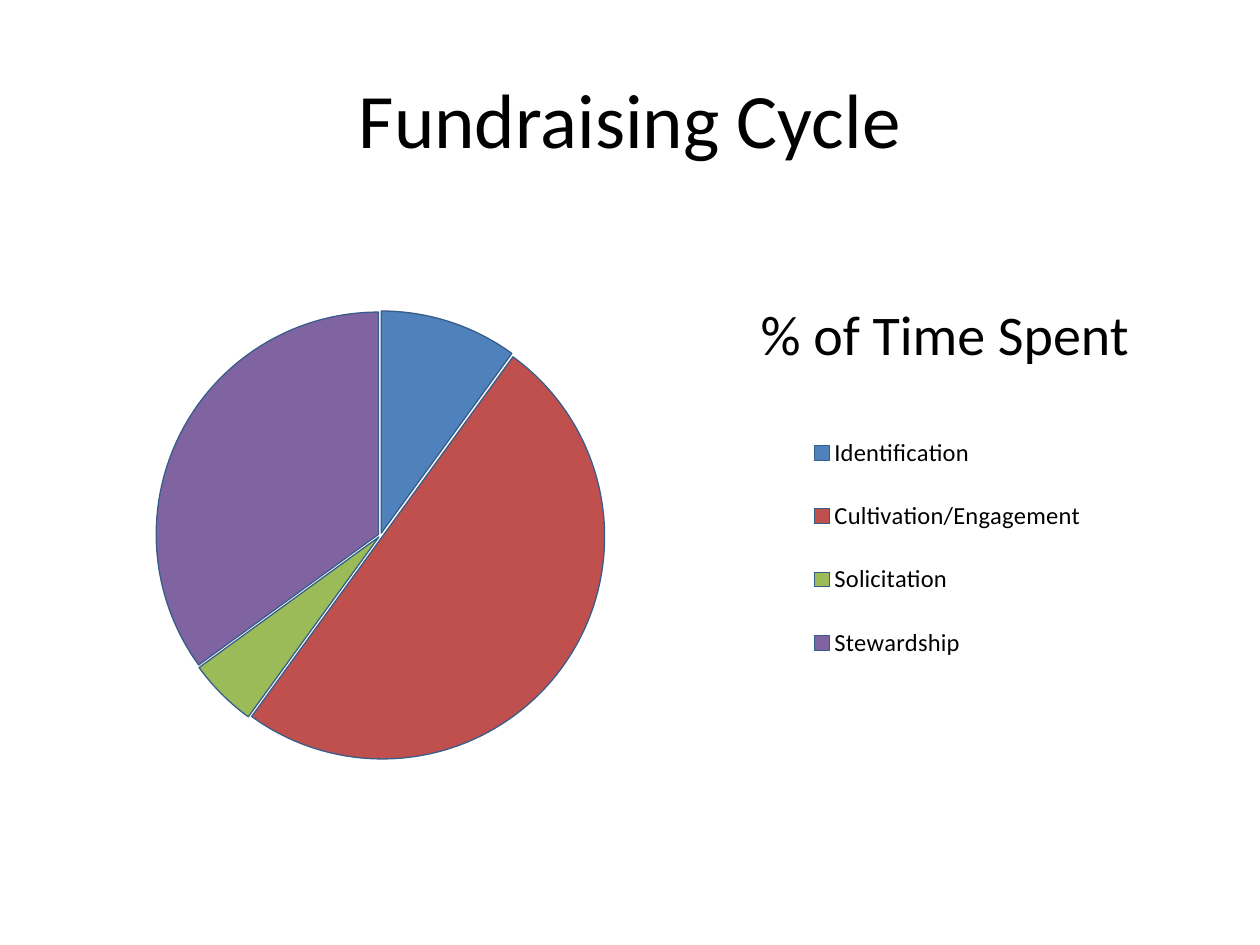
from dataclasses import dataclass

from lxml.etree import SubElement
from pptx import Presentation
from pptx.chart.data import CategoryChartData
from pptx.dml.color import RGBColor
from pptx.enum.chart import XL_CHART_TYPE, XL_LEGEND_POSITION
from pptx.enum.text import MSO_ANCHOR, PP_ALIGN
from pptx.oxml import parse_xml
from pptx.oxml.ns import nsdecls, qn
from pptx.util import Inches, Pt

FONT = "Calibri"
COLORS = {
    "text": "000000",
    "outline": "385D8A",
    "identification": "4F81BD",
    "cultivation": "C0504D",
    "solicitation": "9BBB59",
    "stewardship": "8064A2",
}


@dataclass(frozen=True)
class Box:
    """A place given as shares of its container."""
    left: float
    top: float
    width: float
    height: float


@dataclass(frozen=True)
class Stage:
    label: str
    percent: int
    color: str


@dataclass(frozen=True)
class Heading:
    text: str
    box: Box
    size: int
    anchor: MSO_ANCHOR


STAGES = [
    Stage("Identification", 10, "identification"),
    Stage("Cultivation/Engagement", 50, "cultivation"),
    Stage("Solicitation", 5, "solicitation"),
    Stage("Stewardship", 35, "stewardship"),
]
HEADINGS = [
    Heading("Fundraising Cycle", Box(0.05, 0.04, 0.9, 0.17), 44, MSO_ANCHOR.MIDDLE),
    Heading("% of Time Spent", Box(0.53, 0.31, 0.44, 0.09), 32, MSO_ANCHOR.TOP),
]
CHART_BOX = Box(0.05, 0.23, 0.9, 0.66)
PIE_BOX = Box(0.08, 0.15, 0.4, 0.72)
LEGEND_BOX = Box(0.65, 0.3, 0.26, 0.46)

presentation = Presentation()
presentation.slide_width, presentation.slide_height = Inches(10), Inches(7.5)


def rgb(name: str) -> RGBColor:
    return RGBColor.from_string(COLORS[name])


def on_slide(box: Box) -> tuple[int, int, int, int]:
    width, height = presentation.slide_width, presentation.slide_height
    return (int(box.left * width), int(box.top * height),
            int(box.width * width), int(box.height * height))


def style_font(font, size: int) -> None:
    font.name, font.size = FONT, Pt(size)
    font.color.rgb = rgb("text")


def set_layout(parent, index: int, box: Box, inner: bool = False) -> None:
    """Fix the place of a chart part within the chart."""
    for automatic in parent.findall(qn("c:layout")):
        parent.remove(automatic)
    layout = parse_xml(f"<c:layout {nsdecls('c')}><c:manualLayout/></c:layout>")
    settings = {"layoutTarget": "inner"} if inner else {}
    settings |= {"xMode": "edge", "yMode": "edge", "x": box.left, "y": box.top,
                 "w": box.width, "h": box.height}
    for tag, value in settings.items():
        SubElement(layout[0], qn(f"c:{tag}")).set("val", str(value))
    parent.insert(index, layout)


def add_heading(slide, heading: Heading) -> None:
    frame = slide.shapes.add_textbox(*on_slide(heading.box)).text_frame
    frame.word_wrap = True
    frame.vertical_anchor = heading.anchor
    paragraph = frame.paragraphs[0]
    paragraph.text = heading.text
    paragraph.alignment = PP_ALIGN.CENTER
    style_font(paragraph.font, heading.size)


def add_time_chart(slide, stages: list[Stage]) -> None:
    data = CategoryChartData()
    data.categories = [stage.label for stage in stages]
    data.add_series("Series 1", [stage.percent for stage in stages])
    chart = slide.shapes.add_chart(XL_CHART_TYPE.PIE, *on_slide(CHART_BOX), data).chart
    chart.has_title = False
    style_font(chart.font, 18)

    # Slices, slightly pulled apart
    plot = chart.plots[0]
    plot.vary_by_categories = True
    series = plot.series[0]
    for index, stage in enumerate(stages):
        slice_format = series.points[index].format
        slice_format.fill.solid()
        slice_format.fill.fore_color.rgb = rgb(stage.color)
        slice_format.line.color.rgb = rgb("outline")
        slice_format.line.width = Pt(0.75)
    explosion = parse_xml(f'<c:explosion {nsdecls("c")} val="1"/>')
    series._element.find(qn("c:tx")).addnext(explosion)

    # Legend
    chart.has_legend = True
    legend = chart.legend
    legend.position = XL_LEGEND_POSITION.RIGHT
    legend.include_in_layout = False
    style_font(legend.font, 14)

    set_layout(chart._chartSpace.chart.plotArea, 0, PIE_BOX, inner=True)
    set_layout(legend._element, 1, LEGEND_BOX)


def main() -> None:
    slide = presentation.slides.add_slide(presentation.slide_layouts[6])
    add_time_chart(slide, STAGES)
    for heading in HEADINGS:
        add_heading(slide, heading)
    presentation.save("out.pptx")


if __name__ == "__main__":
    main()
